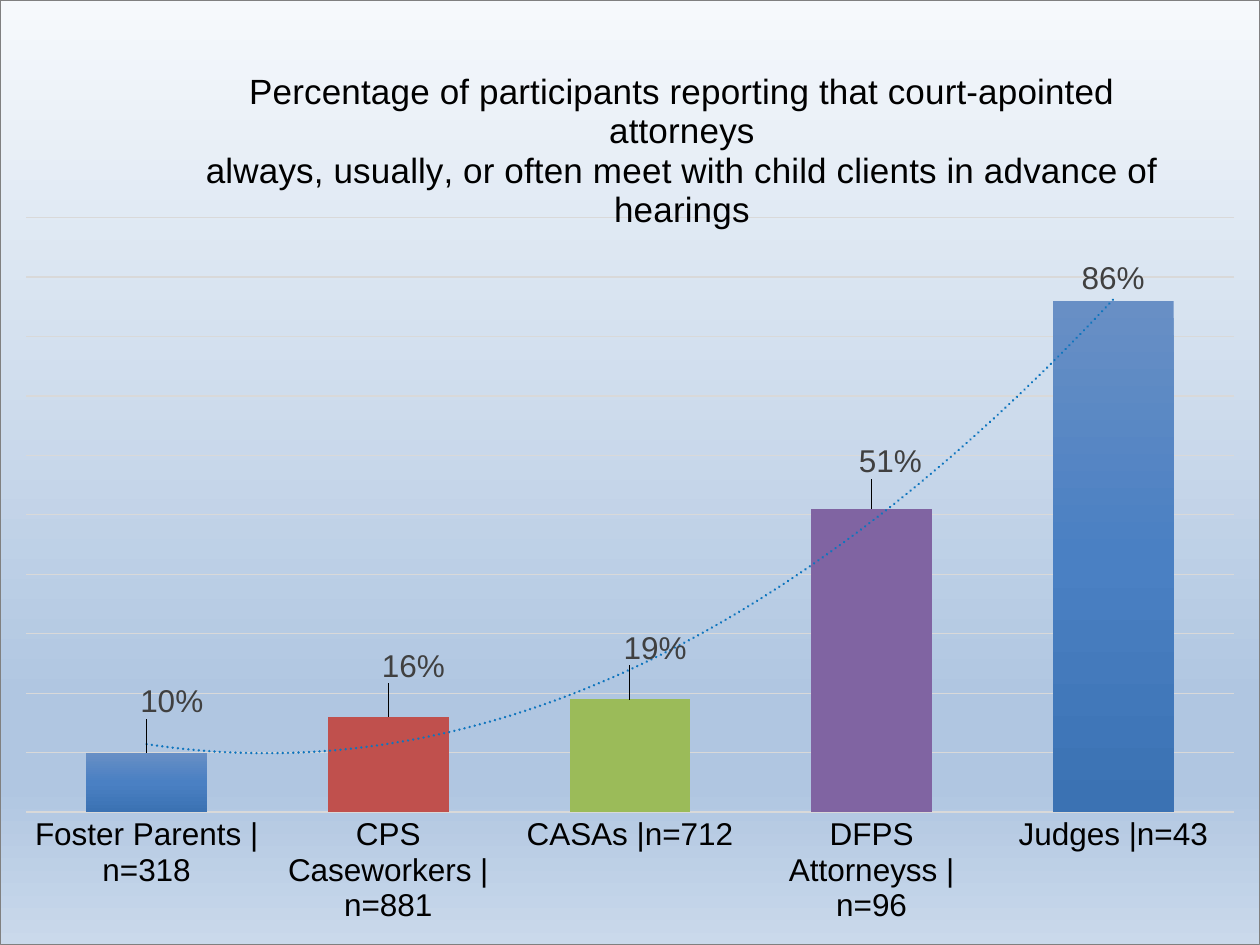
from dataclasses import dataclass

from lxml import etree
from pptx import Presentation
from pptx.chart.data import CategoryChartData
from pptx.dml.color import RGBColor
from pptx.enum.chart import XL_CHART_TYPE as ChartType
from pptx.enum.chart import XL_LABEL_POSITION as LabelPosition
from pptx.enum.chart import XL_TICK_LABEL_POSITION as TickLabels
from pptx.enum.chart import XL_TICK_MARK as TickMark
from pptx.oxml import parse_xml
from pptx.oxml.ns import nsdecls, qn
from pptx.util import Pt


@dataclass(frozen=True)
class Theme:
    font: str = "Arial"
    base_size: int = 10
    label_size: int = 18
    title_size: int = 20
    text: str = "000000"
    label: str = "404040"
    grid: str = "D9D9D9"
    border: str = "808080"
    trend: str = "0F75BD"
    background: tuple = ((0, "F6F9FC"), (74, "B0C6E1"), (83, "B0C6E1"), (100, "CAD9EB"))
    bar: tuple = ((0, "688FC5"), (50, "4A80C3"), (100, "3B72B3"))
    middle_bars: tuple = ("C0504D", "9BBB59", "8064A2")


THEME = Theme()
WIDTH, HEIGHT = Pt(720), Pt(540)
PERCENT = "0\\%;"
TITLE = (
    "Percentage of participants reporting that court-apointed attorneys",
    "always, usually, or often meet with child clients in advance of hearings",
)
RESPONSES = {
    "Foster Parents |n=318": 10,
    "CPS Caseworkers |n=881": 16,
    "CASAs |n=712": 19,
    "DFPS Attorneyss |n=96": 51,
    "Judges |n=43": 86,
}
# Label shifts from the bar end, as shares of the chart's width and height
LABEL_SHIFTS = ((0.02, -0.03), (0.02, -0.03), (0.02, -0.03), (0.015, -0.026))


def style_font(font, size, color):
    font.name = THEME.font
    font.size = Pt(size)
    font.bold = False
    font.color.rgb = RGBColor.from_string(color)


def style_line(line, color, width):
    line.color.rgb = RGBColor.from_string(color)
    line.width = Pt(width)


def set_gradient(fill, owner, stops):
    """Fill from top to bottom with (percent, colour) stops."""
    fill.gradient()
    fill.gradient_angle = 270
    stop_list = next(owner.iter(qn("a:gsLst")))
    for stop in list(stop_list):
        stop_list.remove(stop)
    for percent, color in stops:
        stop = etree.SubElement(stop_list, qn("a:gs"), pos=str(percent * 1000))
        etree.SubElement(stop, qn("a:srgbClr"), val=color)


def set_layout(parent, index, **settings):
    """Give a chart part a manual layout, as its child number index."""
    for existing in parent.findall(qn("c:layout")):
        parent.remove(existing)
    layout = parent.makeelement(qn("c:layout"))
    manual = etree.SubElement(layout, qn("c:manualLayout"))
    for name, value in settings.items():
        etree.SubElement(manual, qn(f"c:{name}"), val=str(value))
    parent.insert(index, layout)


def add_bar_chart(slide):
    data = CategoryChartData(number_format=PERCENT)
    data.categories = list(RESPONSES)
    data.add_series("Series 1", list(RESPONSES.values()))
    chart = slide.shapes.add_chart(
        ChartType.COLUMN_CLUSTERED, 0, 0, WIDTH, HEIGHT, data
    ).chart
    chart.has_legend = False
    style_font(chart.font, THEME.base_size, THEME.text)
    plot = chart.plots[0]
    plot.gap_width = 100
    plot.overlap = -24
    plot.vary_by_categories = False
    plot_area = next(chart.element.iter(qn("c:plotArea"))) if hasattr(chart, "element") \
        else next(chart._chartSpace.iter(qn("c:plotArea")))
    set_layout(plot_area, 0, layoutTarget="inner", xMode="edge", yMode="edge",
               x=0.02, y=0.23, w=0.96, h=0.63)
    return chart


def add_border(chart):
    text_properties = chart._chartSpace.find(qn("c:txPr"))
    text_properties.addprevious(parse_xml(
        f'<c:spPr {nsdecls("c", "a")}><a:noFill/><a:ln w="{Pt(0.75)}"><a:solidFill>'
        f'<a:srgbClr val="{THEME.border}"/></a:solidFill></a:ln></c:spPr>'
    ))


def add_title(chart):
    title = chart.chart_title
    frame = title.text_frame
    frame.text = "\n".join(TITLE)
    for paragraph in frame.paragraphs:
        style_font(paragraph.font, THEME.title_size, THEME.text)
    set_layout(title._element, 1, xMode="edge", yMode="edge", x=0.16, y=0.07)


def style_axes(chart):
    category_axis = chart.category_axis
    category_axis.major_tick_mark = TickMark.NONE
    category_axis.minor_tick_mark = TickMark.NONE
    style_font(category_axis.tick_labels.font, THEME.label_size, THEME.text)
    style_line(category_axis.format.line, THEME.grid, 1)

    value_axis = chart.value_axis
    value_axis.minimum_scale, value_axis.maximum_scale = 0, 100
    value_axis.major_unit = 10
    value_axis.has_major_gridlines = True
    style_line(value_axis.major_gridlines.format.line, THEME.grid, 0.75)
    value_axis.tick_label_position = TickLabels.NONE
    value_axis.visible = False


def color_bars(series):
    set_gradient(series.format.fill, series._element, THEME.bar)
    for index, color in enumerate(THEME.middle_bars, start=1):
        fill = series.points[index].format.fill
        fill.solid()
        fill.fore_color.rgb = RGBColor.from_string(color)


def add_labels(series):
    labels = series.data_labels
    labels.show_value = True
    labels.number_format = PERCENT
    labels.number_format_is_linked = False
    labels.position = LabelPosition.OUTSIDE_END
    style_font(labels.font, THEME.label_size, THEME.label)
    for index in range(len(LABEL_SHIFTS)):
        label = series.points[index].data_label
        style_font(label.font, THEME.label_size, THEME.label)
        label.position = LabelPosition.OUTSIDE_END
    for element, (x, y) in zip(series._element.iter(qn("c:dLbl")), LABEL_SHIFTS):
        set_layout(element, 1, x=x, y=y)
        element.insert(2, element.makeelement(
            qn("c:numFmt"), {"formatCode": PERCENT, "sourceLinked": "0"}))


def add_trend_line(series):
    series._element.find(qn("c:cat")).addprevious(parse_xml(
        f'<c:trendline {nsdecls("c", "a")}><c:spPr><a:ln w="{Pt(1.5)}" cap="rnd">'
        f'<a:solidFill><a:srgbClr val="{THEME.trend}"/></a:solidFill>'
        '<a:prstDash val="sysDot"/></a:ln></c:spPr><c:trendlineType val="poly"/>'
        '<c:order val="2"/><c:dispRSqr val="0"/><c:dispEq val="0"/></c:trendline>'
    ))


def main():
    presentation = Presentation()
    presentation.slide_width, presentation.slide_height = WIDTH, HEIGHT
    slide = presentation.slides.add_slide(presentation.slide_layouts[6])
    set_gradient(slide.background.fill, slide._element, THEME.background)

    chart = add_bar_chart(slide)
    add_border(chart)
    add_title(chart)
    style_axes(chart)
    series = chart.plots[0].series[0]
    color_bars(series)
    add_labels(series)
    add_trend_line(series)
    presentation.save("out.pptx")


if __name__ == "__main__":
    main()
